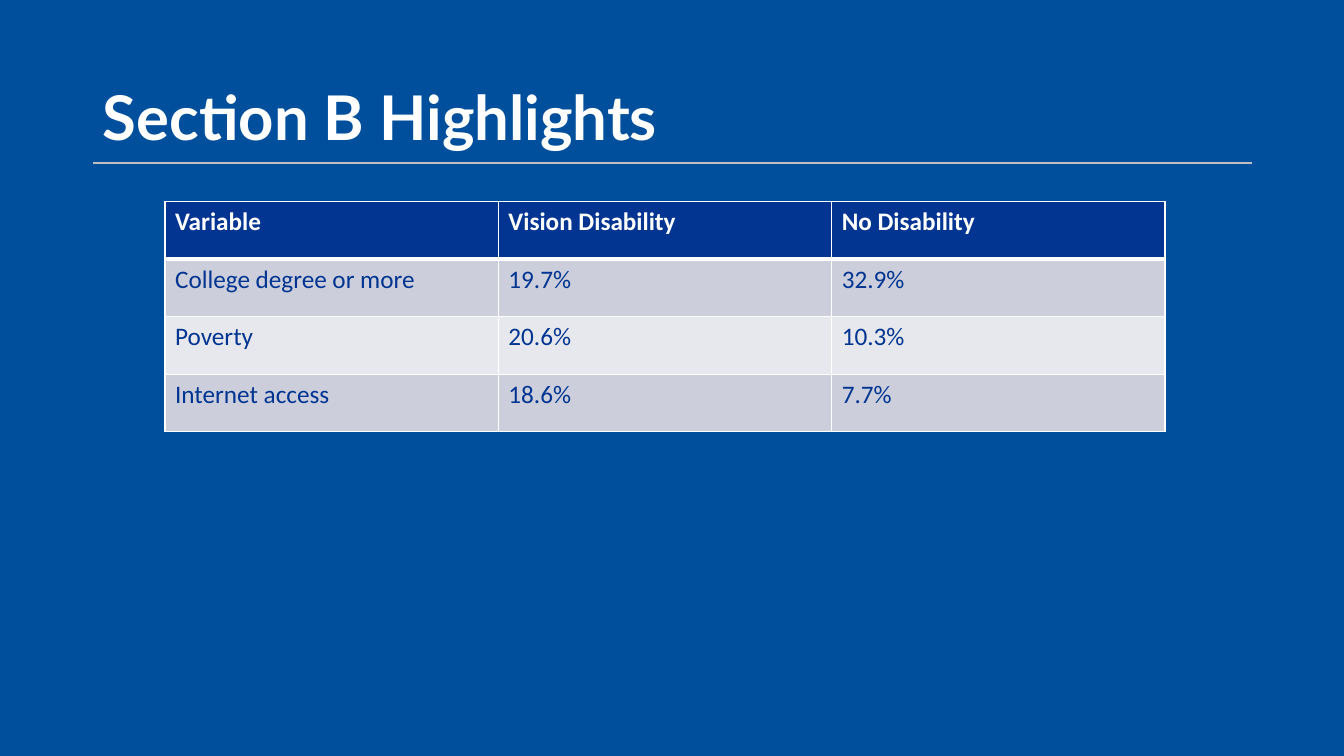
"""Build the Section B Highlights slide with its comparison table."""
from lxml import etree
from pptx import Presentation
from pptx.dml.color import RGBColor
from pptx.enum.shapes import MSO_CONNECTOR
from pptx.enum.text import MSO_ANCHOR, PP_ALIGN
from pptx.oxml.ns import qn
from pptx.util import Cm, Pt

TITLE = "Section B Highlights"
ROWS = [
    ("Variable", "Vision Disability", "No Disability"),
    ("College degree or more", "19.7%", "32.9%"),
    ("Poverty", "20.6%", "10.3%"),
    ("Internet access", "18.6%", "7.7%"),
]

STRAIGHT = MSO_CONNECTOR.STRAIGHT
BOTTOM = MSO_ANCHOR.BOTTOM
TOP = MSO_ANCHOR.TOP
LEFT = PP_ALIGN.LEFT

BLUE = RGBColor(0x00, 0x4F, 0x9D)
NAVY = RGBColor(0x01, 0x35, 0x91)
WHITE = RGBColor(0xFF, 0xFF, 0xFF)
SILVER = RGBColor(0xBF, 0xBF, 0xBF)
BANDS = [RGBColor(0xE7, 0xE8, 0xEE), RGBColor(0xCC, 0xCE, 0xDC)]

MARGIN = Cm(2.34)
RULE_TOP = Cm(4.11)
RULE_WIDTH = Cm(29.21)
COLUMN_WIDTH = Cm(8.4)
ROW_HEIGHT = Cm(1.45)


def write_text(frame, text, *, font, size, color, bold=False, anchor=TOP, spacing=1.0):
    """Put one formatted paragraph into a text frame."""
    frame.text = text
    frame.vertical_anchor = anchor
    para = frame.paragraphs[0]
    para.alignment = LEFT
    para.line_spacing = spacing
    span = para.runs[0]
    span.font.name = font
    span.font.size = Pt(size)
    span.font.bold = bold
    span.font.color.rgb = color


def add_border(cell, side, points):
    """Draw a white border on one side of a table cell."""
    properties = cell._tc.get_or_add_tcPr()
    border = etree.SubElement(properties, qn(f"a:ln{side}"), w=str(Pt(points)))
    fill = etree.SubElement(border, qn("a:solidFill"))
    etree.SubElement(fill, qn("a:srgbClr"), val=str(WHITE))


def add_title(page):
    """Place the title and the rule below it."""
    title = page.shapes.title
    title.left, title.top, title.width, title.height = MARGIN, Cm(1.6), Cm(20.73), Cm(2.41)
    title.text_frame.word_wrap = True
    write_text(title.text_frame, TITLE, font="Lato", size=44, color=WHITE,
               bold=True, anchor=BOTTOM, spacing=0.9)
    rule = page.shapes.add_connector(
        STRAIGHT, MARGIN, RULE_TOP, MARGIN + RULE_WIDTH, RULE_TOP)
    rule.line.color.rgb = SILVER
    rule.line.width = Pt(1)
    etree.SubElement(rule._element.spPr, qn("a:effectLst"))


def add_highlights(page):
    """Add the comparison table with a dark header and banded rows."""
    columns = len(ROWS[0])
    table = page.shapes.add_table(
        len(ROWS), columns, Cm(4.16), Cm(5.08),
        COLUMN_WIDTH * columns, ROW_HEIGHT * len(ROWS)).table
    for row, texts in enumerate(ROWS):
        header = row == 0
        for column, text in enumerate(texts):
            cell = table.cell(row, column)
            write_text(cell.text_frame, text, font="Calibri", size=18,
                       color=WHITE if header else NAVY, bold=header)
            widths = {"L": 1, "R": 1, "T": 3 if row == 1 else 1, "B": 3 if header else 1}
            for side, points in widths.items():
                add_border(cell, side, points)
            cell.fill.solid()
            cell.fill.fore_color.rgb = NAVY if header else BANDS[row % 2]


def main():
    """Create the deck and save it."""
    deck = Presentation()
    deck.slide_width, deck.slide_height = Cm(33.87), Cm(19.05)
    page = deck.slides.add_slide(deck.slide_layouts[5])
    page.background.fill.solid()
    page.background.fill.fore_color.rgb = BLUE
    add_title(page)
    add_highlights(page)
    deck.save("out.pptx")


if __name__ == "__main__":
    main()
